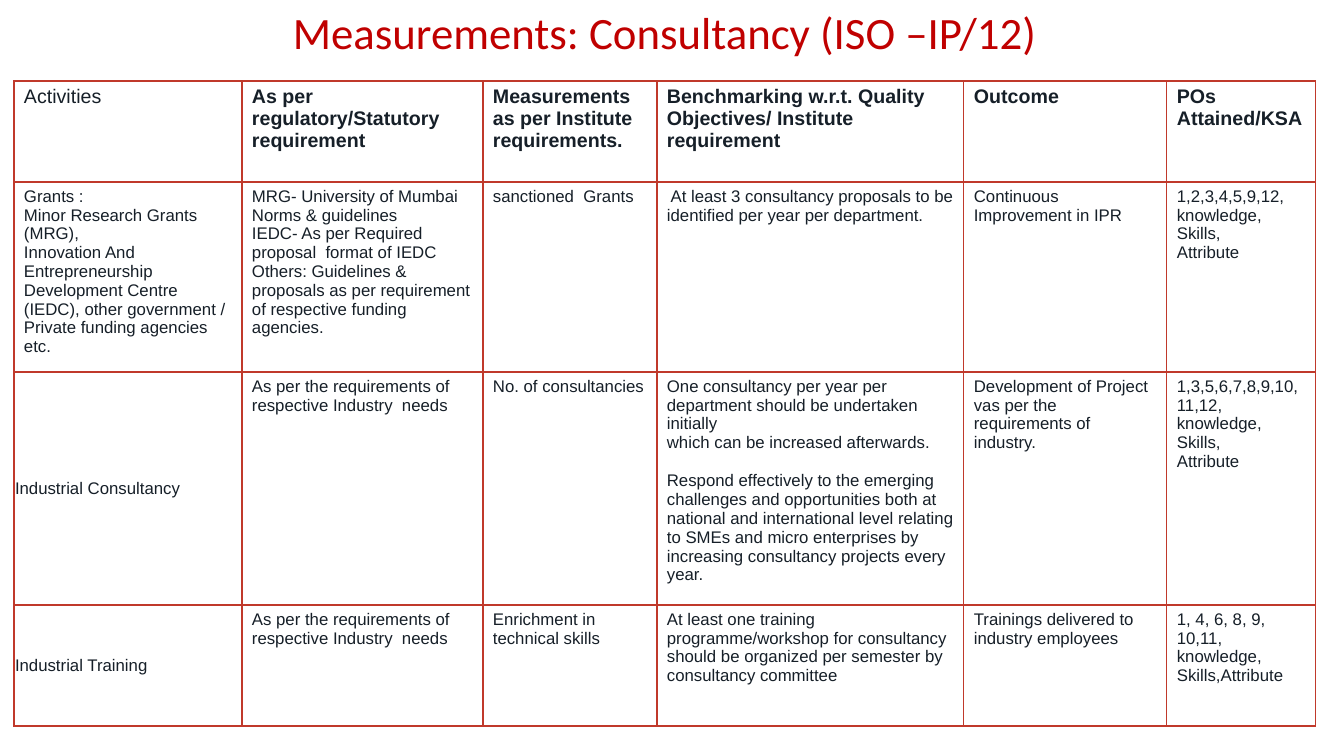
import pptx
import pptx.dml.color
import pptx.enum.text
import pptx.oxml.ns
import pptx.util
from lxml import etree

TITLE = "Measurements: Consultancy (ISO –IP/12)"
NEEDS = ["As per the requirements of respective Industry  needs"]
GAP = "gap"  # marks a blank line's worth of space before the next paragraph

HEADER = [
    ["Activities"],
    ["As per regulatory/Statutory requirement"],
    ["Measurements  as per Institute requirements."],
    ["Benchmarking w.r.t. Quality Objectives/ Institute requirement"],
    ["Outcome"],
    ["POs Attained/KSA"],
]
GRANTS = [
    ["Grants :", "Minor Research Grants (MRG),",
     "Innovation And Entrepreneurship Development Centre (IEDC), "
     "other government / Private funding agencies etc."],
    ["MRG- University of Mumbai  Norms & guidelines",
     "IEDC- As per Required proposal  format of IEDC",
     "Others: Guidelines & proposals as per requirement of respective funding agencies."],
    ["sanctioned  Grants"],
    [" At least 3 consultancy proposals to be identified per year per department."],
    ["Continuous Improvement in IPR"],
    ["1,2,3,4,5,9,12, knowledge, Skills,", "Attribute"],
]
CONSULTANCY = [
    ["Industrial Consultancy"],
    NEEDS,
    ["No. of consultancies"],
    ["One consultancy per year per department should be undertaken initially",
     "which can be increased afterwards.",
     GAP,
     "Respond effectively to the emerging challenges and opportunities both at",
     "national and international level relating to SMEs and micro enterprises by",
     "increasing consultancy projects every year."],
    ["Development of Project vas per the requirements of industry."],
    ["1,3,5,6,7,8,9,10,11,12, knowledge, Skills,", "Attribute"],
]
TRAINING = [
    ["Industrial Training"],
    NEEDS,
    ["Enrichment in technical skills"],
    ["At least one training programme/workshop for consultancy should be "
     "organized per semester by consultancy committee"],
    ["Trainings delivered to industry employees"],
    ["1, 4, 6, 8, 9, 10,11, knowledge, Skills,Attribute"],
]
ROWS = [HEADER, GRANTS, CONSULTANCY, TRAINING]

# Lengths in px
PAGE_SIZE = (1344, 756)
TITLE_BOX = (255, 0, 820, 65)
TABLE_AT = (14, 81)
COLUMN_WIDTHS = [228, 241, 174, 307, 203, 149]
ROW_HEIGHTS = [101, 190, 233, 121]
CELL_MARGINS = (10, 5, 10, 5)
TIGHT_MARGINS = (1, 1, 1, 0)

THEME = {
    "title": {"font": "Calibri", "size": 32, "color": "C00000"},
    "header": {"font": "Arial", "size": 14, "color": "161F28"},
    "body": {"font": "Arial", "size": 12, "color": "161F28"},
    "border": "C0392B",
    "blank_line": 13.8,
}


def px(length):
    return pptx.util.Emu(round(length * 914400 / 100.8))


def add_span(para, text, style, bold=False):
    span = para.add_run()
    span.text = text
    span.font.name = style["font"]
    span.font.size = pptx.util.Pt(style["size"])
    span.font.bold = bold
    span.font.color.rgb = pptx.dml.color.RGBColor.from_string(style["color"])


def set_borders(cell, bottom_width):
    properties = cell._tc.get_or_add_tcPr()
    qn = pptx.oxml.ns.qn
    widths = {"lnL": 1, "lnR": 1, "lnT": 1, "lnB": bottom_width}
    for position, (side, width) in enumerate(widths.items()):
        line = etree.Element(qn(f"a:{side}"), w=str(pptx.util.Pt(width)))
        fill = etree.SubElement(line, qn("a:solidFill"))
        etree.SubElement(fill, qn("a:srgbClr"), val=THEME["border"])
        properties.insert(position, line)


def fill_cell(cell, lines, style, bold):
    frame = cell.text_frame
    para = frame.paragraphs[0]
    after_gap = False
    for number, line in enumerate(lines):
        if line == GAP:
            after_gap = True
            continue
        if number:
            para = frame.add_paragraph()
        if after_gap:
            para.space_before = pptx.util.Pt(THEME["blank_line"])
            after_gap = False
        add_span(para, line, style, bold)


def add_title(page):
    box = page.shapes.add_textbox(*map(px, TITLE_BOX))
    box.text_frame.word_wrap = True
    para = box.text_frame.paragraphs[0]
    para.alignment = pptx.enum.text.PP_ALIGN.CENTER
    add_span(para, TITLE, THEME["title"])


def add_measurements(page):
    frame = page.shapes.add_table(
        len(ROWS), len(COLUMN_WIDTHS), *map(px, TABLE_AT),
        px(sum(COLUMN_WIDTHS)), px(sum(ROW_HEIGHTS)))
    table = frame.table
    table.first_row = False
    table.horz_banding = False
    for column, width in zip(table.columns, COLUMN_WIDTHS):
        column.width = px(width)
    for row, height in zip(table.rows, ROW_HEIGHTS):
        row.height = px(height)

    for r, row in enumerate(ROWS):
        is_header = row is HEADER
        for c, lines in enumerate(row):
            cell = table.cell(r, c)
            is_activity = c == 0 and row in (CONSULTANCY, TRAINING)
            margins = TIGHT_MARGINS if is_activity else CELL_MARGINS
            (cell.margin_left, cell.margin_top,
             cell.margin_right, cell.margin_bottom) = map(px, margins)
            if is_activity:
                cell.vertical_anchor = pptx.enum.text.MSO_ANCHOR.MIDDLE
            cell.fill.background()
            set_borders(cell, 2 if is_header else 1)
            style = THEME["header" if is_header else "body"]
            fill_cell(cell, lines, style, bold=is_header and c > 0)


def main():
    deck = pptx.Presentation()
    deck.slide_width, deck.slide_height = map(px, PAGE_SIZE)
    page = deck.slides.add_slide(deck.slide_layouts[6])
    add_measurements(page)
    add_title(page)
    deck.save("out.pptx")


if __name__ == "__main__":
    main()
